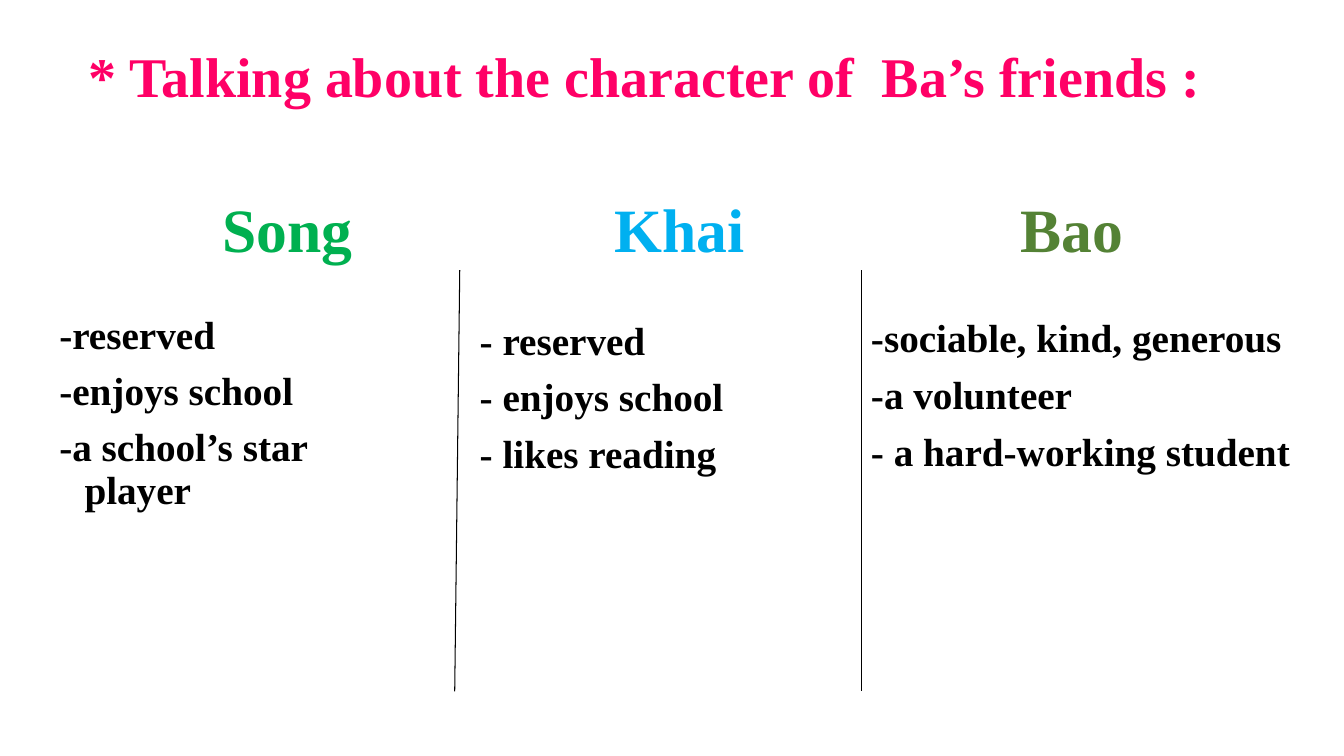
import pptx
import pptx.util
import pptx.dml.color
import pptx.enum.shapes
import pptx.enum.text
import pptx.oxml

Inches = pptx.util.Inches
Pt = pptx.util.Pt
ALIGN = pptx.enum.text.PP_ALIGN
ANCHOR = pptx.enum.text.MSO_ANCHOR

COLORS = {
    "title": "FF0066",
    "text": "000000",
    "song": "00B050",
    "khai": "00B0F0",
    "bao": "548235",
    "background": "FFFFFF",
}


def rgb(name):
    return pptx.dml.color.RGBColor.from_string(COLORS[name])


def write(p, text, font="Times New Roman", size=28, color="text", bold=True,
          align=ALIGN.LEFT, line=1.0, before=0, hanging=0):
    p.alignment = align
    p.line_spacing = line
    p.space_before = Pt(before)
    if hanging:
        pPr = p._p.get_or_add_pPr()
        pPr.set("marL", str(Inches(hanging)))
        pPr.set("indent", str(-Inches(hanging)))
    r = p.add_run()
    r.text = text
    r.font.name = font
    r.font.size = Pt(size)
    r.font.bold = bold
    r.font.color.rgb = rgb(color)


class Deck:
    def __init__(self, width, height):
        self.prs = pptx.Presentation()
        self.prs.slide_width = Inches(width)
        self.prs.slide_height = Inches(height)
        self.s = self.prs.slides.add_slide(self.prs.slide_layouts[6])
        fill = self.s.background.fill
        fill.solid()
        fill.fore_color.rgb = rgb("background")

    def text(self, box, lines, anchor=ANCHOR.TOP, **style):
        sp = self.s.shapes.add_textbox(*map(Inches, box))
        tf = sp.text_frame
        tf.word_wrap = True
        tf.vertical_anchor = anchor
        for i, line in enumerate(lines):
            p = tf.add_paragraph() if i else tf.paragraphs[0]
            write(p, line, **style)

    def divider(self, x1, x2, top=2.68, bottom=6.86):
        sp = self.s.shapes.add_connector(
            pptx.enum.shapes.MSO_CONNECTOR.STRAIGHT,
            Inches(x1), Inches(top), Inches(x2), Inches(bottom))
        sp.line.color.rgb = rgb("text")
        sp.line.width = Pt(0.75)
        sp._element.spPr.append(pptx.oxml.parse_xml(
            '<a:effectLst xmlns:a="http://schemas.openxmlformats.org/drawingml/2006/main"/>'))


def main():
    deck = Deck(13.33, 7.5)
    deck.text((0.78, 0.25, 11.79, 1.08),
              ["* Talking about the character of  Ba’s friends :"],
              anchor=ANCHOR.MIDDLE, size=40, color="title", line=0.9)

    body = dict(line=0.9, before=10, hanging=0.25)
    friends = [
        ("Song", (0.49, 3.08, 3.73, 3.16), body,
         ["-reserved", "-enjoys school", "-a school’s star player"]),
        ("Khai", (4.66, 3.14, 3.73, 2), body,
         ["- reserved", "- enjoys school", "- likes reading"]),
        ("Bao", (8.54, 3.06, 4.41, 2.67), dict(before=7, hanging=0.38),
         ["-sociable, kind, generous", "-a volunteer",
          "- a hard-working student"]),
    ]
    heading_width = 3
    for i, (name, box, style, traits) in enumerate(friends):
        center = 2.85 + 3.89 * i
        deck.text((center - heading_width / 2, 1.93, heading_width, 0.75),
                  [name], anchor=ANCHOR.BOTTOM, size=44,
                  color=name.lower(), align=ALIGN.CENTER)
        deck.text(box, traits, **style)

    deck.divider(4.56, 4.51)
    deck.divider(8.54, 8.54)
    deck.prs.save("out.pptx")


if __name__ == "__main__":
    main()
